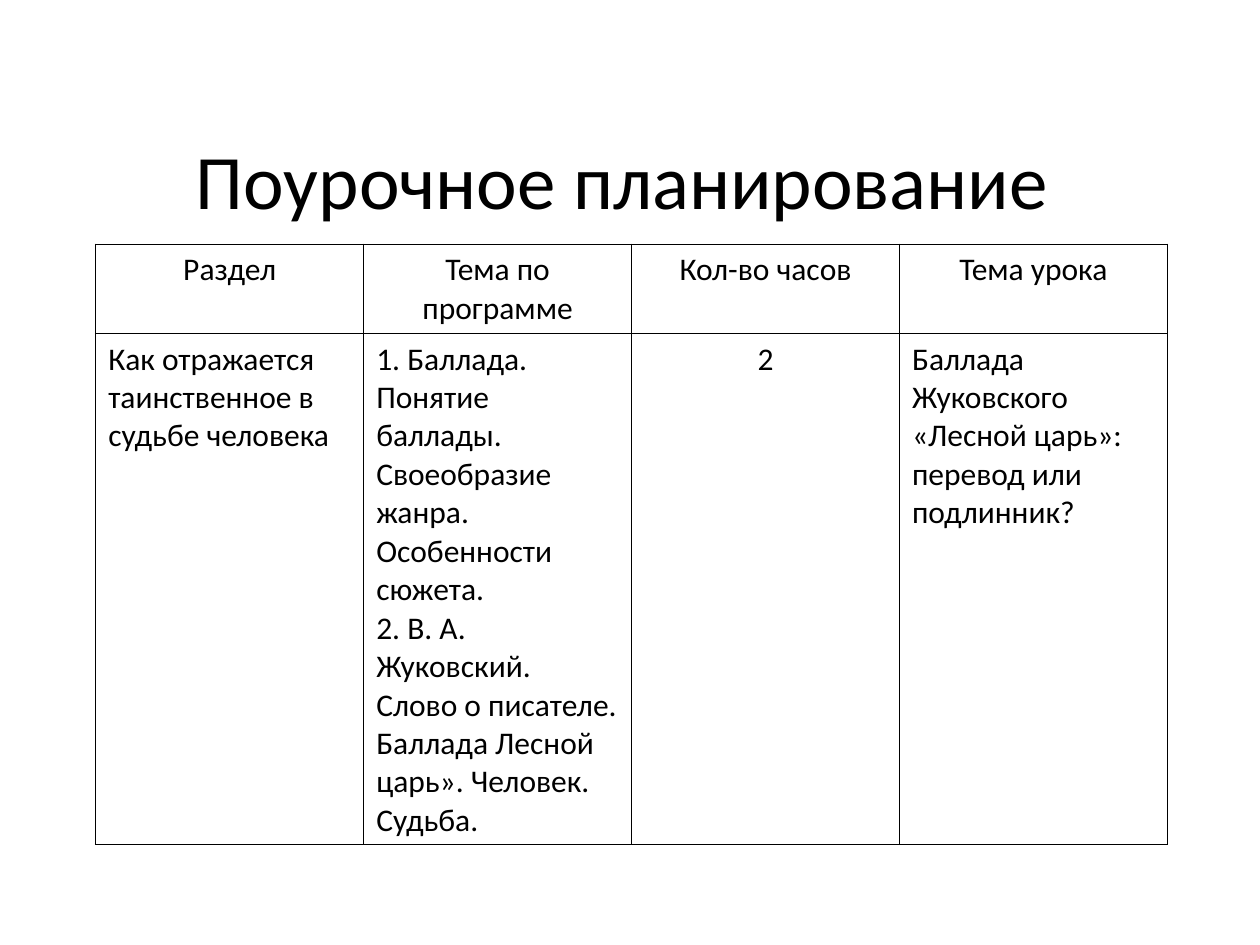
"""Builds the lesson planning slide with its title and table."""
from lxml import etree
from pptx import Presentation
from pptx.dml.color import RGBColor
from pptx.enum import text as t
from pptx.oxml.ns import qn
from pptx.util import Pt

HUES = {"ink": "000000", "page": "FFFFFF"}
FONT = "Calibri"
TITLE = "Поурочное планирование"
MID, LEFT = t.PP_ALIGN.CENTER, t.PP_ALIGN.LEFT
ROWS = [
    [
        (MID, ["Раздел"]),
        (MID, ["Тема по программе"]),
        (MID, ["Кол-во часов"]),
        (MID, ["Тема урока"]),
    ],
    [
        (LEFT, ["Как отражается таинственное в судьбе человека"]),
        (LEFT, [
            "1. Баллада. Понятие баллады. Своеобразие жанра. Особенности сюжета.",
            "2. В. А. Жуковский. Слово о писателе. Баллада Лесной царь». Человек. Судьба.",
        ]),
        (MID, ["2"]),
        (LEFT, ["Баллада Жуковского «Лесной царь»: перевод или подлинник?"]),
    ],
]
HIGHS = [51, 292]
WIDE = 153.1


def hue(name):
    return RGBColor.from_string(HUES[name])


def write(frame, lines, size, align):
    frame.word_wrap = True
    for i, line in enumerate(lines):
        para = frame.add_paragraph() if i else frame.paragraphs[0]
        para.alignment = align
        run = para.add_run()
        run.text = line
        run.font.name = FONT
        run.font.size = Pt(size)
        run.font.color.rgb = hue("ink")


def edge(cell):
    props = cell._tc.get_or_add_tcPr()
    for i, side in enumerate(("lnL", "lnR", "lnT", "lnB")):
        line = etree.Element(qn(f"a:{side}"), w=str(Pt(1)))
        fill = etree.SubElement(line, qn("a:solidFill"))
        etree.SubElement(fill, qn("a:srgbClr"), val=HUES["ink"])
        props.insert(i, line)


def main():
    deck = Presentation()
    deck.slide_width, deck.slide_height = Pt(720), Pt(540)
    slide = deck.slides.add_slide(deck.slide_layouts[6])

    head = slide.shapes.add_textbox(Pt(36.7), Pt(31.7), Pt(648), Pt(345)).text_frame
    head.vertical_anchor = t.MSO_ANCHOR.TOP
    head.margin_top, head.margin_right = Pt(44), Pt(17)
    write(head, [TITLE], 44, MID)

    cols = len(ROWS[0])
    grid = slide.shapes.add_table(
        len(ROWS), cols, Pt(54.7), Pt(139.7), Pt(WIDE * cols), Pt(sum(HIGHS))
    ).table
    grid.first_row = grid.horz_banding = False
    for col in grid.columns:
        col.width = Pt(WIDE)
    for r, (row, high) in enumerate(zip(ROWS, HIGHS)):
        grid.rows[r].height = Pt(high)
        for c, (align, lines) in enumerate(row):
            cell = grid.cell(r, c)
            cell.fill.solid()
            cell.fill.fore_color.rgb = hue("page")
            edge(cell)
            write(cell.text_frame, lines, 18, align)

    deck.save("out.pptx")


if __name__ == "__main__":
    main()
